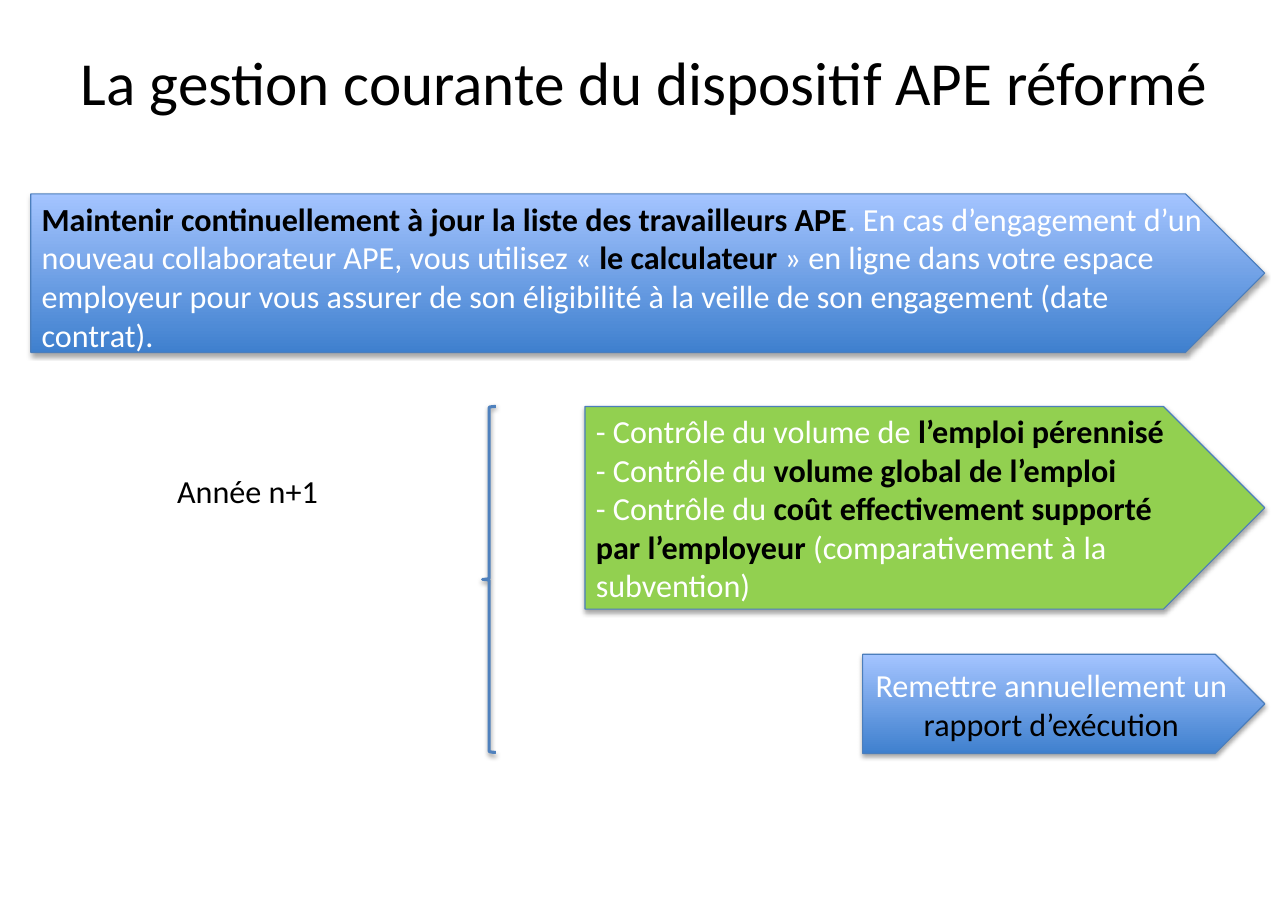
from lxml import etree
from pptx import Presentation
from pptx.dml.color import RGBColor
from pptx.enum import shapes, text
from pptx.oxml import ns
from pptx.util import Inches, Pt

BLACK = RGBColor(0x00, 0x00, 0x00)
WHITE = RGBColor(0xFF, 0xFF, 0xFF)
DEEP_BLUE = RGBColor(0x3F, 0x80, 0xCE)
PALE_BLUE = RGBColor(0xA4, 0xC4, 0xFF)
GREEN = RGBColor(0x92, 0xD0, 0x50)
EDGE_BLUE = RGBColor(0x4B, 0x7E, 0xBC)
BRACE_BLUE = RGBColor(0x4F, 0x81, 0xBD)

RIGHT_EDGE = 11.48
CONTROL_TOP = 3.69

LIST_UPKEEP = [[
    ("Maintenir continuellement à jour la liste des travailleurs APE", BLACK, True),
    (". En cas d’engagement d’un nouveau collaborateur APE, vous utilisez « ", WHITE, False),
    ("le calculateur ", BLACK, True),
    ("» en ligne dans votre espace employeur pour vous assurer de son éligibilité "
     "à la veille de son engagement (date contrat).", WHITE, False),
]]
CONTROLS = [
    [("- Contrôle du volume de ", WHITE, False), ("l’emploi pérennisé", BLACK, True)],
    [("- Contrôle du ", WHITE, False), ("volume global de l’emploi", BLACK, True)],
    [("- Contrôle du ", WHITE, False),
     ("coût effectivement supporté par l’employeur ", BLACK, True),
     ("(comparativement à la subvention)", WHITE, False)],
]
REPORT = [[("Remettre annuellement un ", WHITE, False), ("rapport d’exécution", BLACK, False)]]


def write(frame, paragraphs, size=21, align=text.PP_ALIGN.LEFT):
    frame.word_wrap = True
    for index, parts in enumerate(paragraphs):
        paragraph = frame.add_paragraph() if index else frame.paragraphs[0]
        paragraph.alignment = align
        for words, color, bold in parts:
            run = paragraph.add_run()
            run.text = words
            run.font.name = "Calibri"
            run.font.size = Pt(size)
            run.font.bold = bold
            run.font.color.rgb = color


def cast_shadow(shape, opacity, distance):
    shape.shadow.inherit = False
    effects = shape._element.spPr.find(ns.qn("a:effectLst"))
    shadow = etree.SubElement(
        effects, ns.qn("a:outerShdw"), blurRad=str(Pt(3.1)), dist=str(Pt(distance)),
        dir="5400000", rotWithShape="0")
    black = etree.SubElement(shadow, ns.qn("a:srgbClr"), val="000000")
    etree.SubElement(black, ns.qn("a:alpha"), val=str(opacity * 1000))


def place_title(slide, left, top, width, height):
    title = slide.shapes.title
    title.left, title.top = Inches(left), Inches(top)
    title.width, title.height = Inches(width), Inches(height)
    frame = title.text_frame
    frame.auto_size = text.MSO_AUTO_SIZE.NONE
    frame.vertical_anchor = text.MSO_ANCHOR.MIDDLE
    frame.margin_left = frame.margin_right = Inches(0.07)
    frame.margin_top = frame.margin_bottom = Inches(0.03)
    write(frame, [[("La gestion courante du dispositif APE réformé", BLACK, False)]],
          40, text.PP_ALIGN.CENTER)
    frame.paragraphs[0].line_spacing = 0.9


def add_arrow(slide, left, top, height, paragraphs, color=None,
              anchor=text.MSO_ANCHOR.MIDDLE, align=text.PP_ALIGN.LEFT):
    arrow = slide.shapes.add_shape(
        shapes.MSO_SHAPE.PENTAGON, Inches(left), Inches(top),
        Inches(RIGHT_EDGE - left), Inches(height))
    if color:
        arrow.fill.solid()
        arrow.fill.fore_color.rgb = color
    else:
        arrow.fill.gradient()
        arrow.fill.gradient_angle = 90
        for stop, shade, position in zip(
                arrow.fill.gradient_stops, (DEEP_BLUE, PALE_BLUE), (0, 1)):
            stop.color.rgb = shade
            stop.position = position
    arrow.line.color.rgb = EDGE_BLUE
    arrow.line.width = Pt(0.75)
    cast_shadow(arrow, 35, 1.8)
    arrow.text_frame.vertical_anchor = anchor
    write(arrow.text_frame, paragraphs, align=align)


def add_year(slide, left, top, width, height):
    year = slide.shapes.add_textbox(
        Inches(left), Inches(top + 0.54), Inches(2.26), Inches(0.45))
    write(year.text_frame, [[("Année n+1", BLACK, False)]])
    brace_width = 0.12
    brace = slide.shapes.add_shape(
        shapes.MSO_SHAPE.LEFT_BRACE, Inches(left + width - brace_width), Inches(top),
        Inches(brace_width), Inches(height))
    brace.fill.background()
    brace.line.color.rgb = BRACE_BLUE
    brace.line.width = Pt(2)
    cast_shadow(brace, 38, 1.6)


def main():
    deck = Presentation()
    deck.slide_width, deck.slide_height = Inches(11.69), Inches(8.27)
    slide = deck.slides.add_slide(deck.slide_layouts.get_by_name("Title Only"))
    place_title(slide, 0.33, 0.5, 11.03, 0.55)
    add_arrow(slide, 0.28, 1.76, 1.44, LIST_UPKEEP, anchor=text.MSO_ANCHOR.TOP)
    add_arrow(slide, 5.31, CONTROL_TOP, 1.84, CONTROLS, color=GREEN)
    add_arrow(slide, 7.83, 5.94, 0.9, REPORT, align=text.PP_ALIGN.CENTER)
    add_year(slide, 1.51, CONTROL_TOP, 2.99, 3.14)
    deck.save("out.pptx")


if __name__ == "__main__":
    main()
